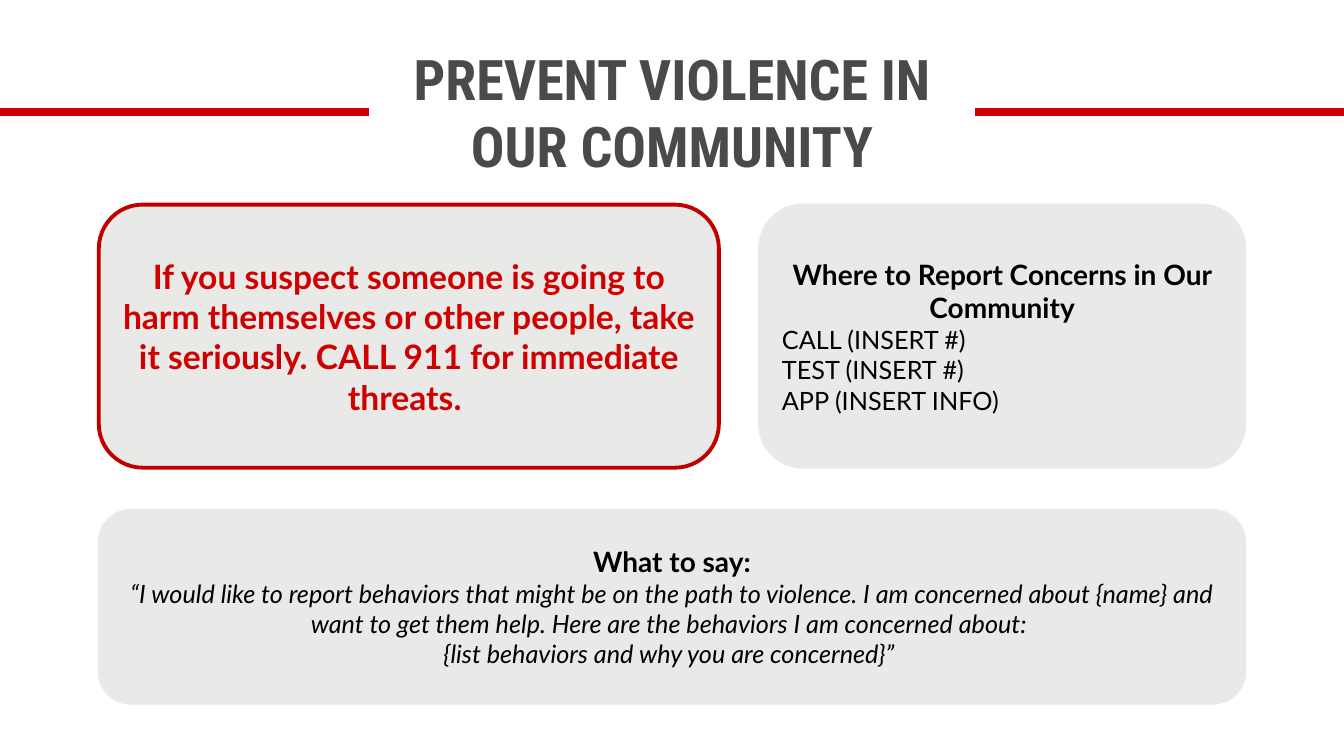
from lxml import etree
from pptx import Presentation
from pptx import util as u
from pptx.dml.color import RGBColor
from pptx.enum import shapes, text
from pptx.oxml.ns import qn

RED = RGBColor(0xD0, 0x00, 0x00)
DARK_RED = RGBColor(0xC0, 0x00, 0x00)
PANEL_GRAY = RGBColor(0xE9, 0xEA, 0xE7)
TITLE_GRAY = RGBColor(0x4A, 0x4A, 0x4A)
BLACK = RGBColor(0x00, 0x00, 0x00)
WHITE = RGBColor(0xFF, 0xFF, 0xFF)

CENTER, LEFT = text.PP_ALIGN.CENTER, text.PP_ALIGN.LEFT

# Content
TITLE = "PREVENT VIOLENCE IN OUR COMMUNITY"
WARNING = ("If you suspect someone is going to harm themselves or other people, "
           "take it seriously. CALL 911 for immediate threats. ")
SCRIPT = ("“I would like to report behaviors that might be on the path to violence. "
          "I am concerned about {name} and want to get them help. "
          "Here are the behaviors I am concerned about: \n"
          "{list behaviors and why you are concerned}” ")

# Text styles: alignment and font values
STYLES = {
    "title": (CENTER, {"name": "Roboto Condensed", "size": 40, "bold": True}, TITLE_GRAY),
    "warning": (CENTER, {"name": "Lato", "size": 24, "bold": True}, RED),
    "heading": (CENTER, {"name": "Lato", "size": 20, "bold": True}, BLACK),
    "contact": (LEFT, {"name": "Lato", "size": 18, "bold": False}, BLACK),
    "quote": (CENTER, {"name": "Lato", "size": 18, "bold": False, "italic": True}, BLACK),
}

# Panel grid, in inches
MARGIN, GAP, FULL_WIDTH = 0.98, 0.4, 11.37
WARNING_WIDTH = 6.15
REPORT_LEFT = MARGIN + WARNING_WIDTH + GAP
REPORT_WIDTH = FULL_WIDTH - WARNING_WIDTH - GAP
TOP, HEIGHT = 2.03, 2.61

# Panels: box, outline colour, outline width, paragraphs
PANELS = [
    ((REPORT_LEFT, TOP, REPORT_WIDTH, HEIGHT), PANEL_GRAY, 1.5, [
        ("heading", "Where to Report Concerns in Our Community"),
        ("contact", "CALL (INSERT #)"),
        ("contact", "TEST (INSERT #)"),
        ("contact", "APP (INSERT INFO)"),
    ]),
    ((MARGIN, 5.06, FULL_WIDTH, 1.92), PANEL_GRAY, 1.5, [
        ("heading", "What to say:"),
        ("quote", SCRIPT),
    ]),
    ((MARGIN, TOP, WARNING_WIDTH, HEIGHT), DARK_RED, 2.75, [("warning", WARNING)]),
]


def write_text(shape, paragraphs):
    frame = shape.text_frame
    frame.word_wrap = True
    frame.auto_size = text.MSO_AUTO_SIZE.NONE
    frame.vertical_anchor = text.MSO_ANCHOR.MIDDLE
    for index, (style, words) in enumerate(paragraphs):
        paragraph = frame.add_paragraph() if index else frame.paragraphs[0]
        alignment, values, color = STYLES[style]
        paragraph.text = words
        paragraph.alignment = alignment
        for run in paragraph.runs:
            for key, value in values.items():
                setattr(run.font, key, u.Pt(value) if key == "size" else value)
            run.font.color.rgb = color


def add_panel(slide, box, outline, width, paragraphs):
    panel = slide.shapes.add_shape(shapes.MSO_SHAPE.ROUNDED_RECTANGLE, *map(u.Inches, box))
    panel.shadow.inherit = False
    panel.fill.solid()
    panel.fill.fore_color.rgb = PANEL_GRAY
    panel.line.color.rgb = outline
    panel.line.width = u.Pt(width)
    write_text(panel, paragraphs)


def main():
    presentation = Presentation()
    presentation.slide_width, presentation.slide_height = u.Inches(13.33), u.Inches(7.5)
    slide = presentation.slides.add_slide(presentation.slide_layouts[5])

    # Panels
    for panel in PANELS:
        add_panel(slide, *panel)

    # Red rule across the slide
    rule = slide.shapes.add_connector(
        shapes.MSO_CONNECTOR.STRAIGHT, 0, u.Inches(1.11),
        presentation.slide_width, u.Inches(1.11))
    rule.line.color.rgb = RED
    rule.line.width = u.Pt(6)
    etree.SubElement(rule.element.spPr, qn("a:effectLst"))

    # Title on white, in front of the rule
    title = slide.shapes.title
    box = {"left": 3.66, "top": 0.43, "width": 6.01, "height": 1.36}
    for key, value in box.items():
        setattr(title, key, u.Inches(value))
    title.fill.solid()
    title.fill.fore_color.rgb = WHITE
    write_text(title, [("title", TITLE)])
    slide.shapes.element.append(title.element)

    presentation.save("out.pptx")


if __name__ == "__main__":
    main()
